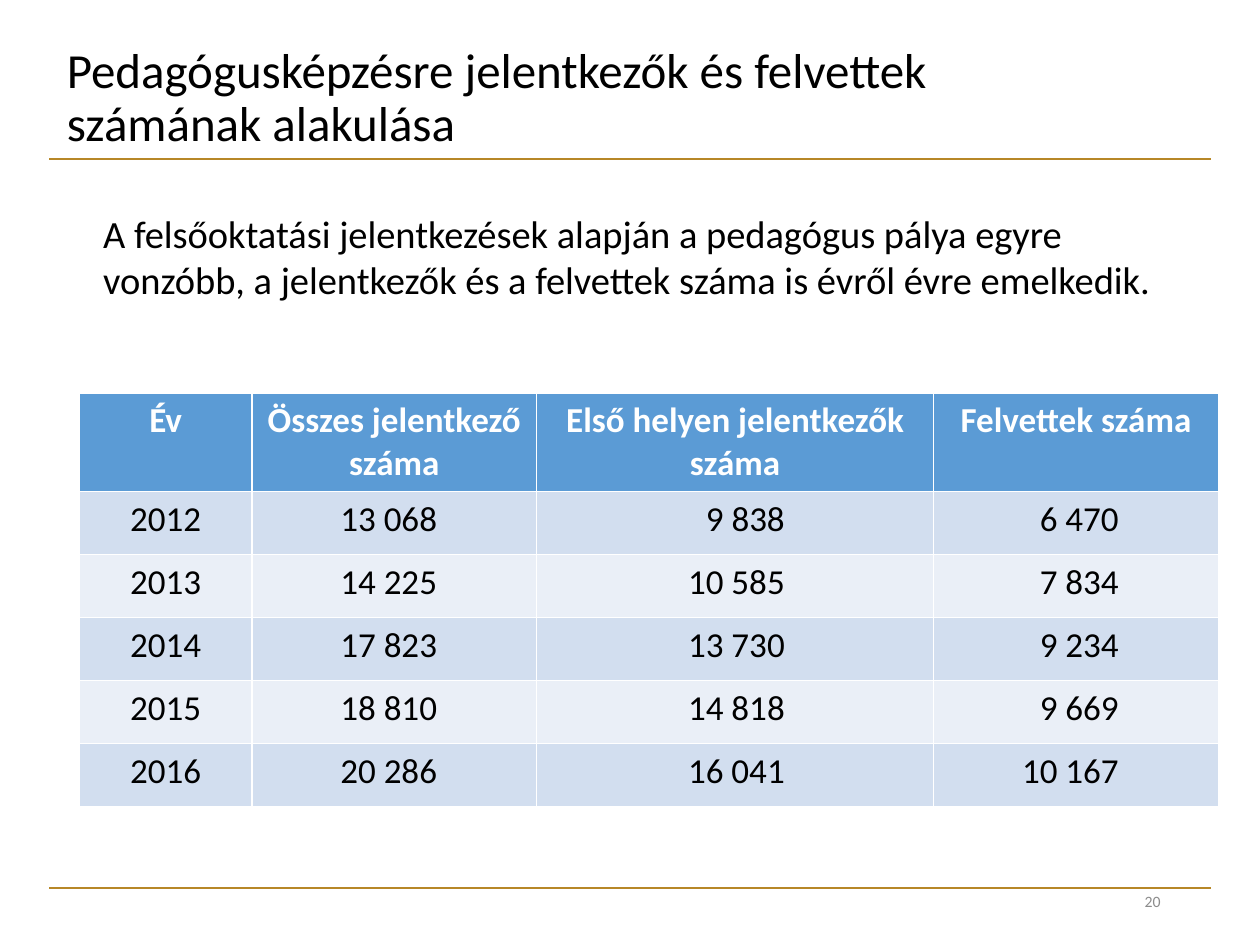
from lxml import etree
from pptx import Presentation
from pptx.dml.color import RGBColor
from pptx.enum import shapes, text
from pptx.oxml.ns import qn
from pptx.util import Inches, Pt


def rgb(hex_color):
    return RGBColor.from_string(hex_color)


def style(paragraph, size, color="000000", align=text.PP_ALIGN.LEFT, bold=False):
    paragraph.alignment = align
    font = paragraph.font
    font.name, font.size, font.bold = "Calibri", Pt(size), bold
    font.color.rgb = rgb(color)


prs = Presentation()
prs.slide_width, prs.slide_height = Inches(10), Inches(7.5)
slide = prs.slides.add_slide(prs.slide_layouts[5])

# Rules under the title and above the page number
for y in (1.26, 7.05):
    rule = slide.shapes.add_connector(
        shapes.MSO_CONNECTOR.STRAIGHT, Inches(0.39), Inches(y), Inches(9.61), Inches(y))
    rule.line.color.rgb = rgb("B78727")
    rule.line.width = Pt(1)
    etree.SubElement(rule._element.spPr, qn("a:effectLst"))

title = slide.shapes.title
title.left, title.top = Inches(0.43), Inches(0.29)
title.width, title.height = Inches(8.88), Inches(0.99)
title.text_frame.text = "Pedagógusképzésre jelentkezők és felvettek \vszámának alakulása"
title.text_frame.vertical_anchor = text.MSO_ANCHOR.MIDDLE
title.text_frame.auto_size = text.MSO_AUTO_SIZE.NONE
title.text_frame.paragraphs[0].line_spacing = 0.9
style(title.text_frame.paragraphs[0], 28)

# Applicants and admissions by year
headers = ["Év", "Összes jelentkező száma", "Első helyen jelentkezők száma", "Felvettek száma"]
years = [
    ["2012", "13 068", "9 838", "6 470"],
    ["2013", "14 225", "10 585", "7 834"],
    ["2014", "17 823", "13 730", "9 234"],
    ["2015", "18 810", "14 818", "9 669"],
    ["2016", "20 286", "16 041", "10 167"],
]
column_widths = [1.37, 2.26, 3.15, 2.26]
number_tabs = [None, 1.37, 1.87, 1.37]

table = slide.shapes.add_table(
    len(years) + 1, len(headers),
    Inches(0.63), Inches(3.12), Inches(sum(column_widths)), Inches(3.21)).table
for column, width in zip(table.columns, column_widths):
    column.width = Inches(width)
for r, values in enumerate([headers] + years):
    is_header = r == 0
    table.rows[r].height = Inches(0.71 if is_header else 0.5)
    row_fill = "5B9BD5" if is_header else ("D2DEEF" if r % 2 else "EAEFF7")
    for c, value in enumerate(values):
        cell = table.cell(r, c)
        cell.fill.solid()
        cell.fill.fore_color.rgb = rgb(row_fill)
        paragraph = cell.text_frame.paragraphs[0]
        if is_header or c == 0:
            paragraph.text = value
            style(paragraph, 20, "FFFFFF" if is_header else "000000",
                  text.PP_ALIGN.CENTER, is_header)
        else:
            paragraph.text = "\t" + value
            tabs = etree.SubElement(paragraph._p.get_or_add_pPr(), qn("a:tabLst"))
            etree.SubElement(tabs, qn("a:tab"), pos=str(Inches(number_tabs[c])), algn="r")
            style(paragraph, 20)

page_number = slide.shapes.add_textbox(
    Inches(7.06), Inches(6.95), Inches(2.25), Inches(0.4)).text_frame
page_number.word_wrap = True
page_number.vertical_anchor = text.MSO_ANCHOR.MIDDLE
page_number.text = "20"
style(page_number.paragraphs[0], 9, "8C8C8C", text.PP_ALIGN.RIGHT)

summary = slide.shapes.add_textbox(
    Inches(0.72), Inches(1.62), Inches(8.82), Inches(0.84)).text_frame
summary.word_wrap = True
summary.auto_size = text.MSO_AUTO_SIZE.SHAPE_TO_FIT_TEXT
summary.text = ("A felsőoktatási jelentkezések alapján a pedagógus pálya egyre vonzóbb, "
                "a jelentkezők és a felvettek száma is évről évre emelkedik.")
style(summary.paragraphs[0], 22)

prs.save("out.pptx")
